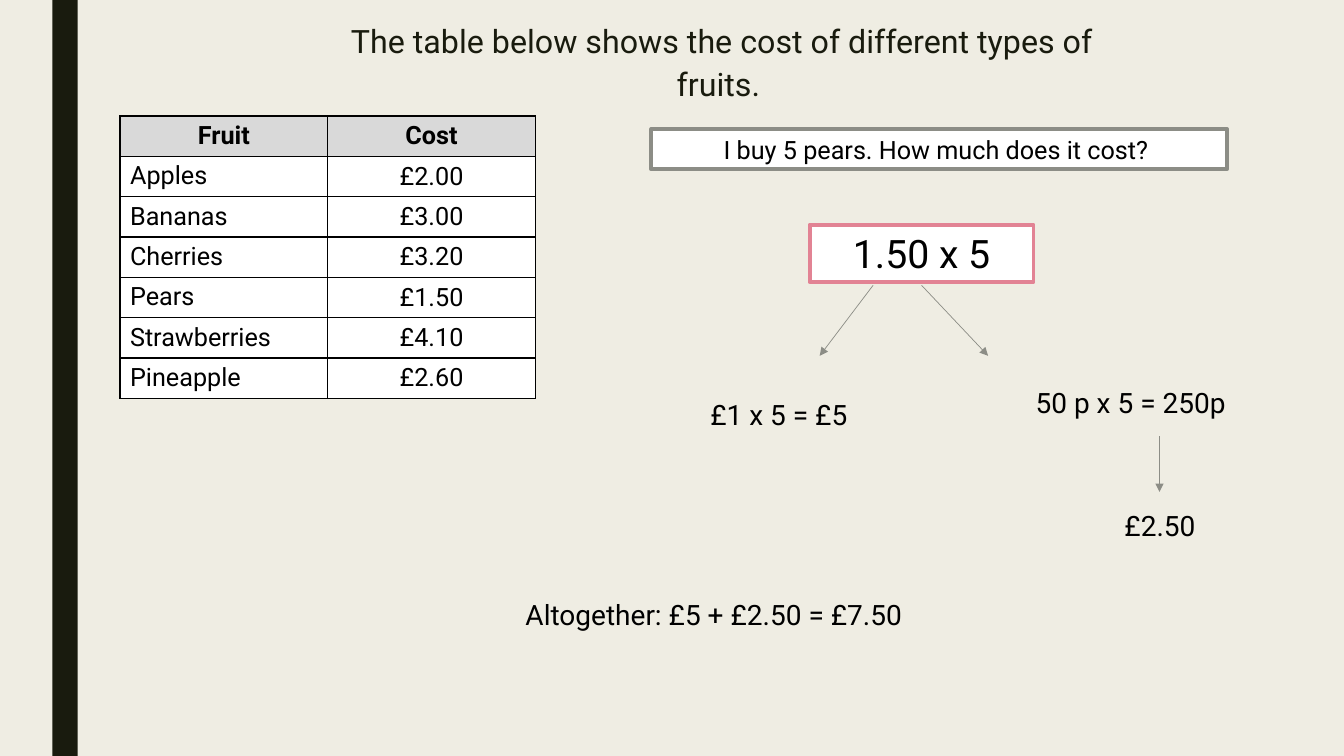
from lxml import etree
from pptx import Presentation
from pptx.dml.color import RGBColor
from pptx.enum.shapes import MSO_CONNECTOR, MSO_SHAPE
from pptx.enum.text import MSO_ANCHOR, PP_ALIGN
from pptx.oxml.ns import qn
from pptx.util import Inches, Pt

RECT = MSO_SHAPE.RECTANGLE
LINE = MSO_CONNECTOR.STRAIGHT
TOP, MID = MSO_ANCHOR.TOP, MSO_ANCHOR.MIDDLE
LEFT, MIDDLE = PP_ALIGN.LEFT, PP_ALIGN.CENTER

PAPER, INK, BLACK, WHITE = "EFEDE3", "191B0E", "000000", "FFFFFF"
HEAD, GREY, PINK = "D9D9D9", "8C8D86", "E28394"

TITLE = "The table below shows the cost of different types of fruits. "
FRUITS = [
    ("Fruit", "Cost"),
    ("Apples", "£2.00"),
    ("Bananas", "£3.00"),
    ("Cherries", "£3.20"),
    ("Pears", "£1.50"),
    ("Strawberries", "£4.10"),
    ("Pineapple", "£2.60"),
]
BOXES = [
    ("I buy 5 pears. How much does it cost? ", (6.46, 1.28, 5.71, 0.4), 18, GREY),
    ("1.50 x 5", (8.03, 2.23, 2.22, 0.57), 28, PINK),
]
STEPS = [
    ("£1 x 5 = £5", (6.31, 3.89, 2.83, 0.44)),
    ("50 p x 5 = 250p", (9.8, 3.78, 2.83, 0.44)),
    ("£2.50", (10.09, 5, 2.83, 0.44)),
    ("Altogether: £5 + £2.50 = £7.50", (2.22, 5.88, 9.72, 0.44)),
]
ARROWS = [
    (8.66, 2.83, 8.13, 3.53),
    (9.14, 2.83, 9.8, 3.53),
    (11.5, 4.33, 11.5, 4.88),
]
GRID = (1.19, 1.15, 4.12, 2.75)


def color(code):
    return RGBColor.from_string(code)


def inches(spot):
    return [Inches(n) for n in spot]


def paint(item, code):
    item.fill.solid()
    item.fill.fore_color.rgb = color(code)


def write(frame, text, size, code=BLACK, align=MIDDLE, anchor=TOP, bold=False):
    frame.word_wrap = True
    frame.vertical_anchor = anchor
    para = frame.paragraphs[0]
    para.alignment = align
    run = para.add_run()
    run.text = text
    look = {"name": "Roboto", "size": Pt(size), "bold": bold}
    for key, value in look.items():
        setattr(run.font, key, value)
    run.font.color.rgb = color(code)
    return para


def add_text(text, spot, size, code=BLACK, anchor=TOP):
    box = slide.shapes.add_textbox(*inches(spot))
    return write(box.text_frame, text, size, code, anchor=anchor)


def add_rect(spot, fill, edge=None):
    rect = slide.shapes.add_shape(RECT, *inches(spot))
    rect.shadow.inherit = False
    paint(rect, fill)
    if edge:
        rect.line.color.rgb = color(edge)
        rect.line.width = Pt(2.75)
    else:
        rect.line.fill.background()
    return rect


def add_arrow(ends):
    arrow = slide.shapes.add_connector(LINE, *inches(ends))
    arrow.line.color.rgb = color(GREY)
    arrow.line.width = Pt(0.5)
    tail = etree.SubElement(arrow.line._get_or_add_ln(), qn("a:tailEnd"))
    tail.set("type", "triangle")
    etree.SubElement(arrow._element.spPr, qn("a:effectLst"))


def add_edges(cell):
    props = cell._tc.get_or_add_tcPr()
    for spot, side in enumerate(("lnL", "lnR", "lnT", "lnB")):
        edge = etree.Element(qn("a:" + side), w=str(Pt(1)))
        fill = etree.SubElement(edge, qn("a:solidFill"))
        etree.SubElement(fill, qn("a:srgbClr"), val=BLACK)
        props.insert(spot, edge)


def add_grid():
    rows, cols = len(FRUITS), len(FRUITS[0])
    table = slide.shapes.add_table(rows, cols, *inches(GRID)).table
    for col in table.columns:
        col.width = Inches(GRID[2] / cols)
    for r, row in enumerate(FRUITS):
        table.rows[r].height = Inches(GRID[3] / rows)
        for c, text in enumerate(row):
            cell = table.cell(r, c)
            name = r > 0 and c == 0
            paint(cell, WHITE if r else HEAD)
            write(cell.text_frame, text, 18, align=LEFT if name else MIDDLE, bold=r == 0)
            cell.vertical_anchor = TOP if name else MID
            add_edges(cell)


deck = Presentation()
deck.slide_width, deck.slide_height = inches((13.33, 7.5))
slide = deck.slides.add_slide(deck.slide_layouts[6])
paint(slide.background, PAPER)

add_rect((0.52, 0, 0.25, 7.5), INK)
title = add_text(TITLE, (2.99, 0.29, 8.35, 0.61), 23, INK, MID)
title.line_spacing = 1.12
add_grid()
for text, spot, size, edge in BOXES:
    write(add_rect(spot, WHITE, edge).text_frame, text, size)
for ends in ARROWS:
    add_arrow(ends)
for text, spot in STEPS:
    add_text(text, spot, 20)

deck.save("out.pptx")
